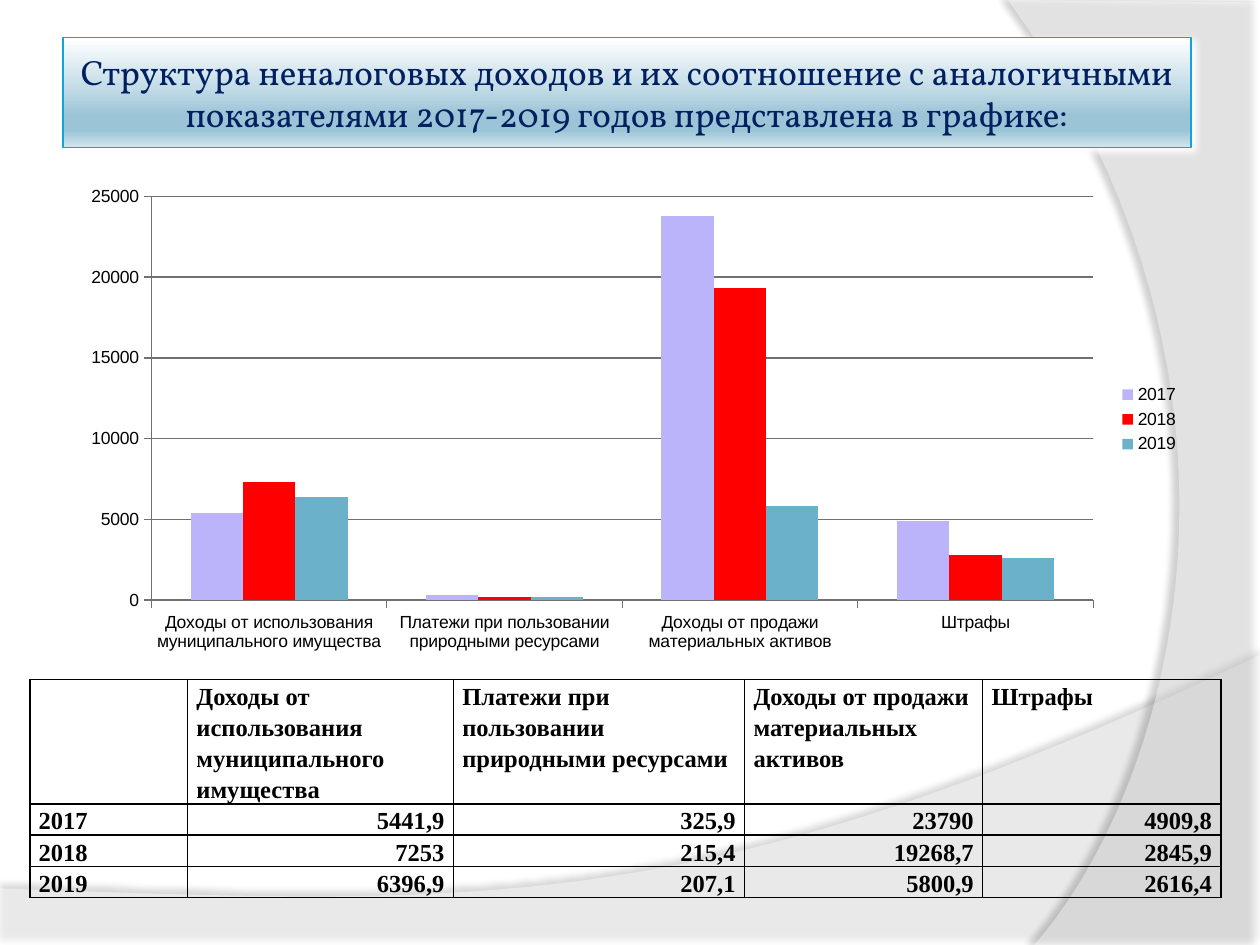
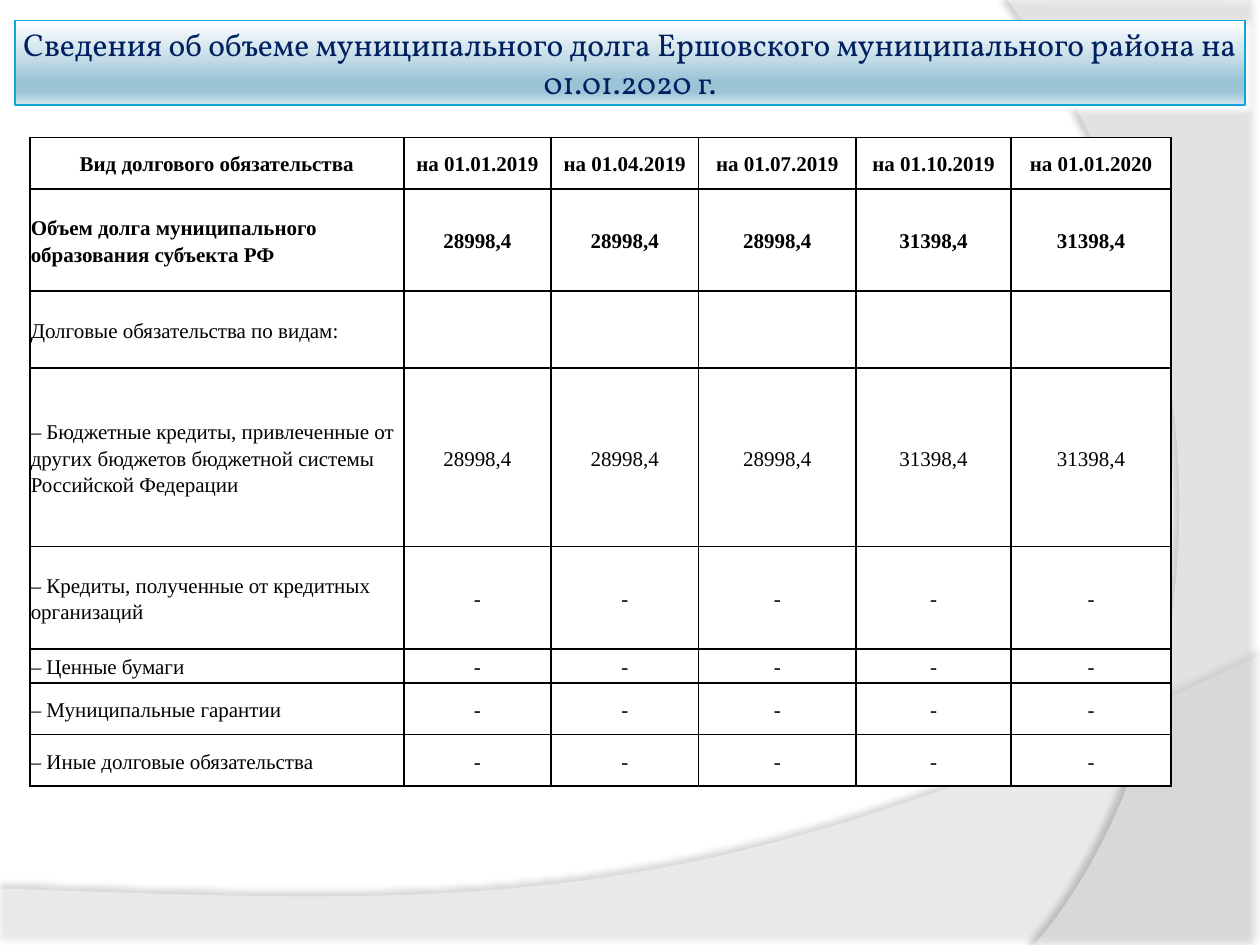
from lxml import etree
from pptx import Presentation
from pptx.chart.data import CategoryChartData
from pptx.dml.color import RGBColor
from pptx.enum.chart import XL_CHART_TYPE, XL_LEGEND_POSITION, XL_TICK_MARK
from pptx.enum.text import MSO_ANCHOR, MSO_AUTO_SIZE, PP_ALIGN
from pptx.oxml import parse_xml
from pptx.oxml.ns import nsdecls, qn
from pptx.util import Cm, Pt

LEFT, CENTER, RIGHT = PP_ALIGN.LEFT, PP_ALIGN.CENTER, PP_ALIGN.RIGHT
TOP, MIDDLE, BOTTOM = MSO_ANCHOR.TOP, MSO_ANCHOR.MIDDLE, MSO_ANCHOR.BOTTOM
OUTSIDE = XL_TICK_MARK.OUTSIDE

WHITE = RGBColor(0xFF, 0xFF, 0xFF)
BLACK = RGBColor(0x00, 0x00, 0x00)
NAVY = RGBColor(0x00, 0x20, 0x60)
TITLE_LINE = RGBColor(0x10, 0xA4, 0xDA)
GRID_GRAY = RGBColor(0x70, 0x70, 0x70)
LILAC = RGBColor(0xBB, 0xB4, 0xFB)
RED = RGBColor(0xFF, 0x00, 0x00)
TEAL = RGBColor(0x6B, 0xB1, 0xC9)
TITLE_STOPS = [(0, WHITE), (45, RGBColor(0xC4, 0xDC, 0xE7)),
               (70, RGBColor(0x9C, 0xC4, 0xD7)), (85, RGBColor(0x9E, 0xC6, 0xD8)),
               (100, RGBColor(0xD4, 0xE6, 0xEE))]
TITLE_FONT, TABLE_FONT, CHART_FONT = "Vollkorn", "Times New Roman", "Arial"

# Background waves: straight corners, Bezier curve from the last corner, opacity and shadow
WAVES = [
    dict(corners=[(0, 17.91), (0, 19.05), (25.4, 19.05), (25.4, 13.21)],
         curve=[(14.2, 18.52), (9.93, 18.26), (0, 17.91)],
         opacity=45, shadow_opacity=35, distance=3.5, direction=270),
    dict(corners=[(25.4, 0.05), (25.4, 19.05), (20.85, 19.05)],
         curve=[(23.75, 15.72), (25.86, 7.62), (20.32, 0)],
         opacity=40, shadow_opacity=45, distance=4, direction=180),
]
CURVE_STEPS = 40

# Titles: text, left, top, width, height in cm, size in points
TITLES = [
    ("Структура неналоговых доходов и их соотношение с аналогичными "
     "показателями 2017-2019 годов представлена в графике:", (1.27, 0.76, 22.74, 2.22), 20),
    ("Сведения об объеме муниципального долга Ершовского муниципального района "
     "на 01.01.2020 г.", (0.3, 0.42, 24.8, 1.7), 18),
]

INCOME_KINDS = ["Доходы от использования муниципального имущества",
                "Платежи при пользовании природными ресурсами",
                "Доходы от продажи материальных активов", "Штрафы"]
INCOME_BY_YEAR = {
    "2017": ["5441,9", "325,9", "23790", "4909,8"],
    "2018": ["7253", "215,4", "19268,7", "2845,9"],
    "2019": ["6396,9", "207,1", "5800,9", "2616,4"],
}

DEBT_DATES = ["01.01.2019", "01.04.2019", "01.07.2019", "01.10.2019", "01.01.2020"]
DEBT_VALUES = ["28998,4"] * 3 + ["31398,4"] * 2
NO_DEBT = ["-"] * len(DEBT_DATES)
DEBT_ROWS = [
    ["Вид долгового обязательcтва"] + [f"на {date}" for date in DEBT_DATES],
    ["Объем долга муниципального образования субъекта РФ"] + DEBT_VALUES,
    ["Долговые обязательства по видам:"] + [""] * len(DEBT_DATES),
    ["– Бюджетные кредиты, привлеченные от других бюджетов бюджетной системы "
     "Российской Федерации"] + DEBT_VALUES,
    ["– Кредиты, полученные от кредитных организаций"] + NO_DEBT,
    ["– Ценные бумаги"] + NO_DEBT,
    ["– Муниципальные гарантии"] + NO_DEBT,
    ["– Иные долговые обязательства"] + NO_DEBT,
]


def write_text(holder, text, font=TABLE_FONT, size=12, color=BLACK, bold=False,
               align=LEFT, spacing=None):
    paragraph = holder.text_frame.paragraphs[0]
    paragraph.alignment = align
    paragraph.line_spacing = spacing
    paragraph.font.size = Pt(size)
    if text:
        run = paragraph.add_run()
        run.text = text
        run.font.name, run.font.size = font, Pt(size)
        run.font.bold, run.font.color.rgb = bold, color


def add_grid_table(slide, rows, left, top, widths, heights, margins, fill, style):
    """Add a black-ruled table; style(row, column) gives anchor and text format."""
    table = slide.shapes.add_table(len(rows), len(widths), Cm(left), Cm(top),
                                   Cm(sum(widths)), Cm(sum(heights))).table
    table.first_row = table.horz_banding = False
    for column, width in zip(table.columns, widths):
        column.width = Cm(width)
    for row, height in zip(table.rows, heights):
        row.height = Cm(height)
    for row_index, texts in enumerate(rows):
        for column_index, text in enumerate(texts):
            cell = table.cell(row_index, column_index)
            cell.margin_left = cell.margin_right = Cm(margins[0])
            cell.margin_top = cell.margin_bottom = Cm(margins[1])
            cell.vertical_anchor, text_format = style(row_index, column_index)
            write_text(cell, text, spacing=1.15, **text_format)
            if fill is None:
                cell.fill.background()
            else:
                cell.fill.solid()
                cell.fill.fore_color.rgb = fill
            properties = cell._tc.get_or_add_tcPr()
            for position, side in enumerate(("lnL", "lnR", "lnT", "lnB")):
                properties.insert(position, parse_xml(
                    f'<a:{side} {nsdecls("a")} w="{Pt(1)}"><a:solidFill>'
                    f'<a:srgbClr val="{BLACK}"/></a:solidFill></a:{side}>'))


presentation = Presentation()
presentation.slide_width, presentation.slide_height = Cm(25.4), Cm(19.05)
title_only = presentation.slide_layouts[5]

# Shared background and title band
slides = []
for title_text, box, title_size in TITLES:
    slide = presentation.slides.add_slide(title_only)
    slides.append(slide)
    for wave in WAVES:
        points = list(wave["corners"])
        control = [points[-1]] + wave["curve"]
        for step in range(1, CURVE_STEPS + 1):
            t = step / CURVE_STEPS
            weights = [(1 - t) ** 3, 3 * t * (1 - t) ** 2, 3 * t * t * (1 - t), t ** 3]
            points.append([sum(w * p[axis] for w, p in zip(weights, control))
                           for axis in (0, 1)])
        points = [(Cm(x), Cm(y)) for x, y in points]
        builder = slide.shapes.build_freeform(*points[0])
        builder.add_line_segments(points[1:], close=True)
        shape = builder.convert_to_shape()
        shape.fill.solid()
        shape.fill.fore_color.rgb = WHITE
        shape.line.fill.background()
        shape.shadow.inherit = False
        properties = shape.element.spPr
        fill_color = properties.find(qn("a:solidFill")).find(qn("a:srgbClr"))
        etree.SubElement(fill_color, qn("a:alpha"), val=str(wave["opacity"] * 1000))
        properties.find(qn("a:effectLst")).append(parse_xml(
            f'<a:outerShdw {nsdecls("a")} blurRad="{Pt(4)}" dist="{Pt(wave["distance"])}" '
            f'dir="{wave["direction"] * 60000}" algn="ctr" rotWithShape="0">'
            f'<a:srgbClr val="{BLACK}"><a:alpha val="{wave["shadow_opacity"] * 1000}"/>'
            f'</a:srgbClr></a:outerShdw>'))

    title = slide.shapes.title
    title.element.getparent().append(title.element)  # in front of the waves
    title.left, title.top, title.width, title.height = [Cm(value) for value in box]
    title.fill.gradient()
    title.fill.gradient_angle = 270
    stops = title.element.spPr.find(qn("a:gradFill")).find(qn("a:gsLst"))
    for stop in list(stops):
        stops.remove(stop)
    for percent, color in TITLE_STOPS:
        stop = etree.SubElement(stops, qn("a:gs"), pos=str(percent * 1000))
        etree.SubElement(stop, qn("a:srgbClr"), val=str(color))
    title.line.color.rgb = TITLE_LINE
    title.line.width = Pt(0.75)
    title.shadow.inherit = False
    title.element.spPr.find(qn("a:effectLst")).append(parse_xml(
        f'<a:outerShdw {nsdecls("a")} blurRad="{Pt(4)}" dist="{Pt(2)}" dir="2700000" '
        f'algn="ctr" rotWithShape="0"><a:srgbClr val="{WHITE}"/></a:outerShdw>'))
    frame = title.text_frame
    frame.auto_size, frame.word_wrap = MSO_AUTO_SIZE.NONE, True
    frame.vertical_anchor = MIDDLE
    frame.margin_left = frame.margin_right = Cm(0.13)
    frame.margin_top = frame.margin_bottom = Cm(0.13)
    write_text(title, title_text, font=TITLE_FONT, size=title_size, color=NAVY, align=CENTER)

income_slide, debt_slide = slides

# Income table
add_grid_table(
    income_slide,
    [[""] + INCOME_KINDS] + [[year] + values for year, values in INCOME_BY_YEAR.items()],
    0.6, 13.7, [3.18, 5.36, 5.87, 4.8, 4.8], [2.44, 0.59, 0.59, 0.59], (0.18, 0), None,
    lambda row, column: (BOTTOM if row and column else TOP,
                         dict(size=14, bold=True, align=RIGHT if row and column else LEFT)))

# Income chart, values rounded to hundreds
chart_width, chart_height = 22.63, 9.75
chart_data = CategoryChartData()
chart_data.categories = INCOME_KINDS
for year, values in INCOME_BY_YEAR.items():
    chart_data.add_series(year, [int(round(float(value.replace(",", ".")), -2))
                                 for value in values])
chart = income_slide.shapes.add_chart(XL_CHART_TYPE.COLUMN_CLUSTERED, Cm(1.4), Cm(3.58),
                                      Cm(chart_width), Cm(chart_height), chart_data).chart
chart.has_title = False
chart.font.name, chart.font.size, chart.font.color.rgb = CHART_FONT, Pt(10), BLACK
chart.has_legend = True
chart.legend.position = XL_LEGEND_POSITION.RIGHT
chart.legend.include_in_layout = False
plot = chart.plots[0]
plot.gap_width, plot.overlap, plot.vary_by_categories = 150, 0, False
for series, color in zip(plot.series, (LILAC, RED, TEAL)):
    series.format.fill.solid()
    series.format.fill.fore_color.rgb = color
value_axis = chart.value_axis
value_axis.minimum_scale, value_axis.maximum_scale, value_axis.major_unit = 0, 25000, 5000
value_axis.has_major_gridlines = True
value_axis.tick_labels.number_format = "0"
value_axis.tick_labels.number_format_is_linked = False
for axis in (value_axis, chart.category_axis):
    axis.major_tick_mark = OUTSIDE
for lined in (value_axis, chart.category_axis, value_axis.major_gridlines):
    lined.format.line.color.rgb = GRID_GRAY
    lined.format.line.width = Pt(0.75)
plot_area = chart.element.find(qn("c:chart")).find(qn("c:plotArea"))
for layout in plot_area.findall(qn("c:layout")):
    plot_area.remove(layout)
plot_area.insert(0, parse_xml(
    f'<c:layout {nsdecls("c")}><c:manualLayout><c:layoutTarget val="inner"/>'
    '<c:xMode val="edge"/><c:yMode val="edge"/>'
    f'<c:x val="{1.65 / chart_width}"/><c:y val="{0.38 / chart_height}"/>'
    f'<c:w val="{18.99 / chart_width}"/><c:h val="{8.14 / chart_height}"/>'
    '</c:manualLayout></c:layout>'))

# Debt table
add_grid_table(
    debt_slide, DEBT_ROWS, 0.6, 2.77, [7.54, 2.97, 2.97, 3.18, 3.12, 3.23],
    [1.04, 2.06, 1.55, 3.6, 2.06, 0.69, 1.04, 1.04], (0.02, 0.02), WHITE,
    lambda row, column: (MIDDLE, dict(bold=row < 2,
                                      align=LEFT if row and not column else CENTER)))

presentation.save("out.pptx")
